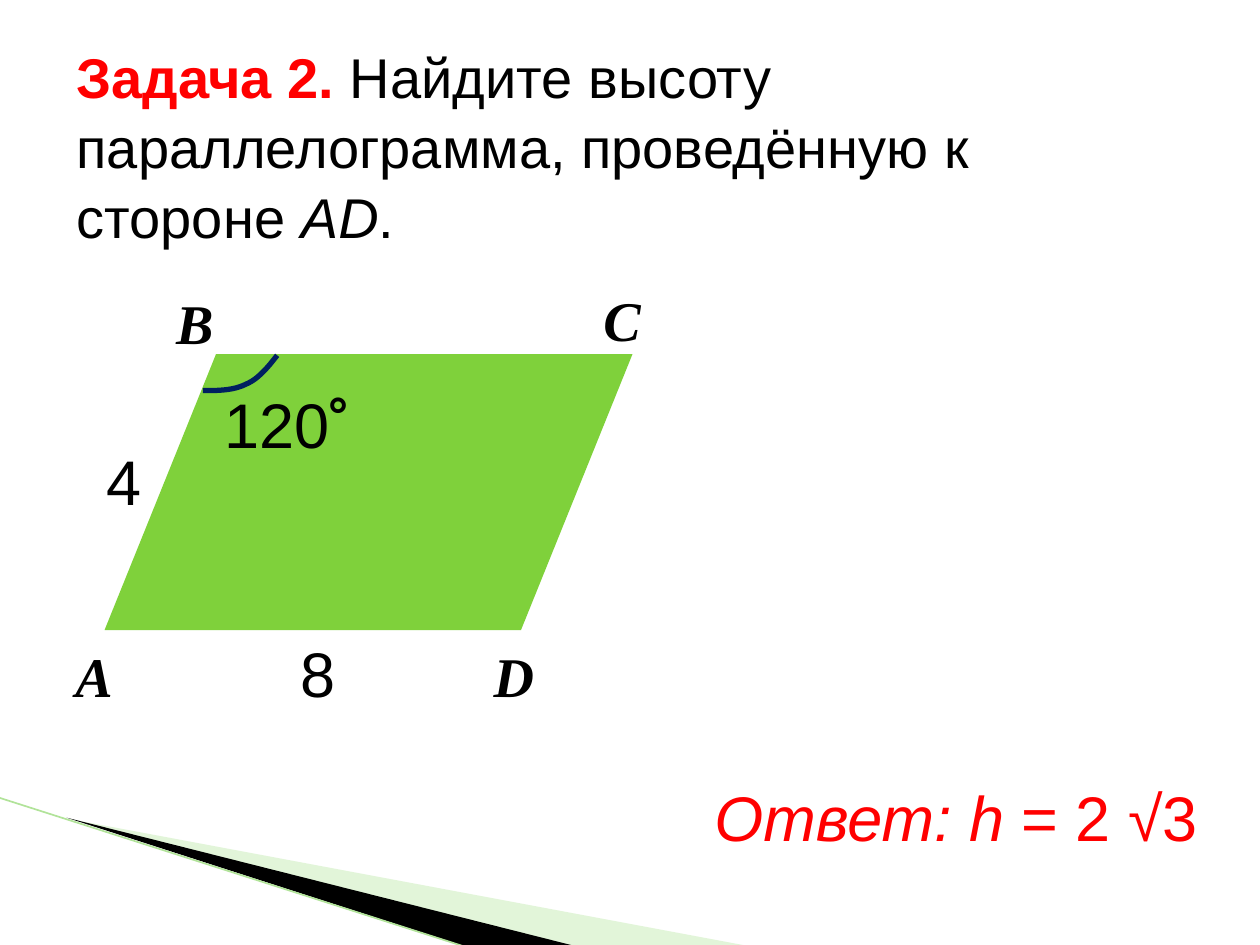
from dataclasses import dataclass

from lxml import etree
from pptx import Presentation
from pptx.dml.color import RGBColor
from pptx.enum import shapes, text
from pptx.oxml.ns import qn
from pptx.util import Inches, Pt

COLORS = {
    "red": "FF0000",
    "black": "000000",
    "fill": "7FD13B",
    "arc": "002060",
    "pale": "B8E7A1",
    "edge": "B1E399",
}
Point = tuple[float, float]


@dataclass
class Run:
    words: str
    size: float
    color: str = "black"
    bold: bool = False
    italic: bool = False
    font: str = "Arial"


@dataclass
class Label:
    left: float
    top: float
    width: float
    height: float
    runs: list[Run]
    wrap: bool = False
    align: text.PP_ALIGN = text.PP_ALIGN.LEFT


def rgb(name: str) -> RGBColor:
    return RGBColor.from_string(COLORS[name])


def add_label(slide, label: Label):
    box = slide.shapes.add_textbox(
        Inches(label.left), Inches(label.top), Inches(label.width), Inches(label.height))
    frame = box.text_frame
    frame.word_wrap = label.wrap
    paragraph = frame.paragraphs[0]
    paragraph.alignment = label.align
    for part in label.runs:
        run = paragraph.add_run()
        run.text = part.words
        run.font.name = part.font
        run.font.size = Pt(part.size)
        run.font.bold = part.bold
        run.font.italic = part.italic
        run.font.color.rgb = rgb(part.color)
    return frame


def add_outline(slide, points: list[Point], closed: bool):
    corners = [(Inches(x), Inches(y)) for x, y in points]
    builder = slide.shapes.build_freeform(*corners[0])
    builder.add_line_segments(corners[1:], close=closed)
    outline = builder.convert_to_shape()
    outline.shadow.inherit = False
    return outline


def add_wedge(slide, points: list[Point], color: str, opacity: int = 100) -> None:
    wedge = add_outline(slide, points, closed=True)
    wedge.fill.solid()
    wedge.fill.fore_color.rgb = rgb(color)
    wedge.line.fill.background()
    if opacity < 100:
        tint = wedge._element.spPr.find(qn("a:solidFill"))[0]
        etree.SubElement(tint, qn("a:alpha"), val=str(opacity * 1000))


def bezier(a: Point, b: Point, c: Point, d: Point, steps: int = 12) -> list[Point]:
    def at(t: float, axis: int) -> float:
        s = 1 - t
        return (s**3 * a[axis] + 3 * s * s * t * b[axis]
                + 3 * s * t * t * c[axis] + t**3 * d[axis])
    return [(at(i / steps, 0), at(i / steps, 1)) for i in range(steps + 1)]


def add_decoration(slide) -> None:
    add_wedge(slide, [(0.55, 6.5), (5.95, 7.51), (4.56, 7.51)], "pale", 40)
    add_wedge(slide, [(0.53, 6.49), (4.57, 7.51), (3.72, 7.52)], "black")
    edge = slide.shapes.add_connector(
        shapes.MSO_CONNECTOR.STRAIGHT,
        Inches(-0.01), Inches(6.33), Inches(3.71), Inches(7.52))
    edge.line.color.rgb = rgb("edge")
    edge.line.width = Pt(0.95)
    etree.SubElement(edge._element.spPr, qn("a:effectLst"))


def add_parallelogram(slide) -> None:
    figure = slide.shapes.add_shape(
        shapes.MSO_SHAPE.PARALLELOGRAM,
        Inches(0.83), Inches(2.81), Inches(4.19), Inches(2.19))
    figure.adjustments[0] = 0.404
    figure.fill.solid()
    figure.fill.fore_color.rgb = rgb("fill")
    figure.line.fill.background()
    figure.shadow.inherit = False


def add_angle_arc(slide) -> None:
    curve = (bezier((2.2, 2.82), (2.13, 2.91), (2.05, 3.01), (1.95, 3.05))
             + bezier((1.95, 3.05), (1.85, 3.1), (1.73, 3.1), (1.61, 3.1))[1:])
    arc = add_outline(slide, curve, closed=False)
    arc.fill.background()
    arc.line.color.rgb = rgb("arc")
    arc.line.width = Pt(3)


def main() -> None:
    deck = Presentation()
    deck.slide_width, deck.slide_height = Inches(10), Inches(7.5)
    slide = deck.slides.add_slide(deck.slide_layouts[6])
    add_decoration(slide)

    # Answer and problem statement
    add_label(slide, Label(5.55, 6.13, 4.08, 0.71, [
        Run("Ответ: h", 36, "red", italic=True),
        Run(" = 2 √3", 36, "red"),
    ], align=text.PP_ALIGN.CENTER))
    problem = add_label(slide, Label(0.51, 0.36, 9, 1.58, [
        Run("Задача 2. ", 32, "red", bold=True),
        Run("Найдите высоту параллелограмма, проведённую к стороне ", 32),
        Run("АD", 32, italic=True),
        Run(".", 32),
    ], wrap=True))
    problem.vertical_anchor = text.MSO_ANCHOR.MIDDLE
    problem.paragraphs[0].line_spacing = 1.04

    # Figure with its vertices, angle and side lengths
    add_parallelogram(slide)
    vertices = {"A": (0.5, 5.04), "B": (1.3, 2.24), "C": (4.69, 2.22), "D": (3.82, 5.04)}
    for vertex, (left, top) in vertices.items():
        name = Run(vertex, 32, bold=True, italic=True, font="Times New Roman")
        add_label(slide, Label(left, top, 0.64, 0.64, [name], wrap=True))
    add_label(slide, Label(1.68, 3.01, 1.21, 0.71,
                           [Run("120", 36), Run("˚", 36, bold=True)]))
    add_angle_arc(slide)
    for length, left, top in (("4", 0.75, 3.46), ("8", 2.29, 4.99)):
        add_label(slide, Label(left, top, 0.55, 0.71, [Run(length, 36)]))

    deck.save("out.pptx")


if __name__ == "__main__":
    main()
